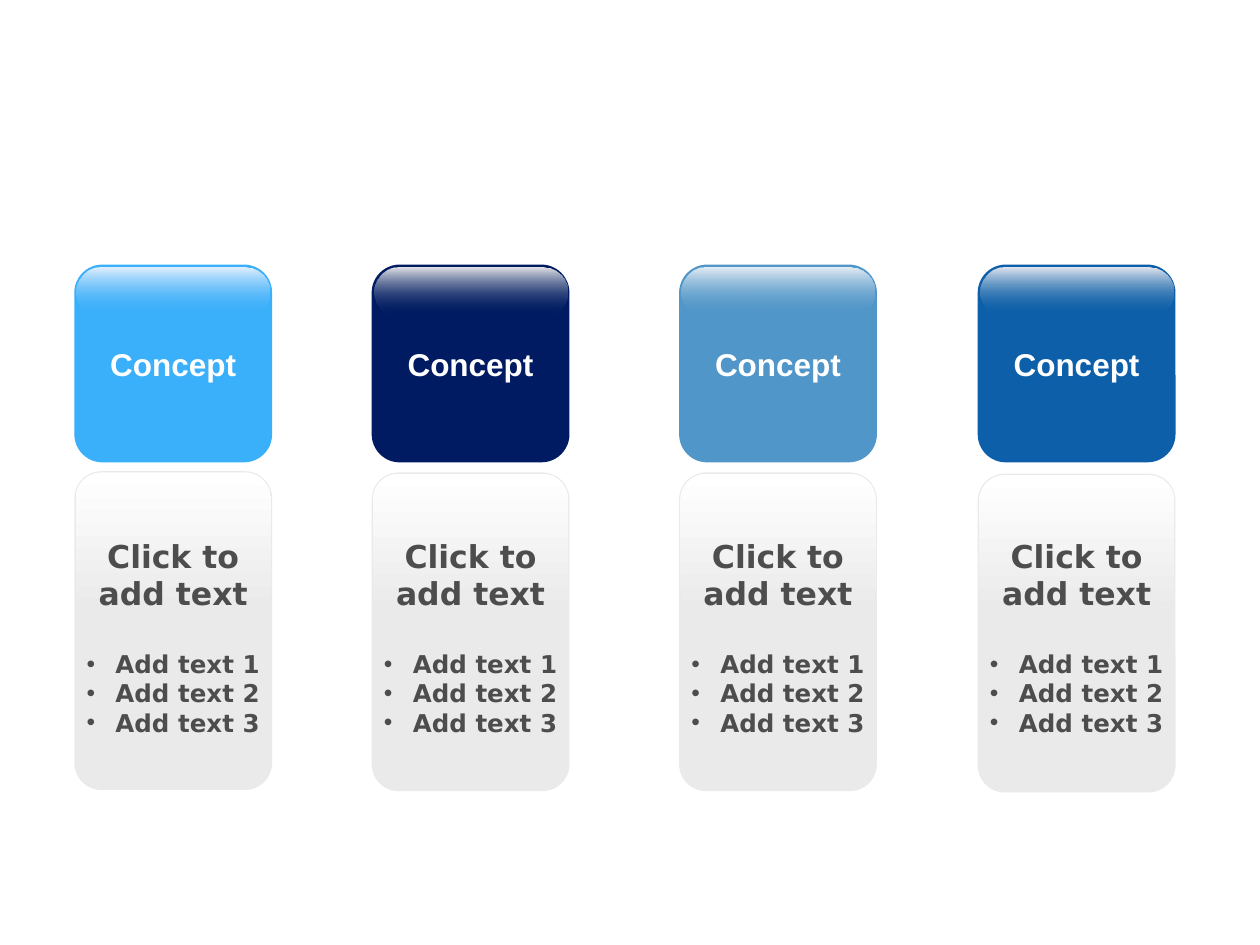
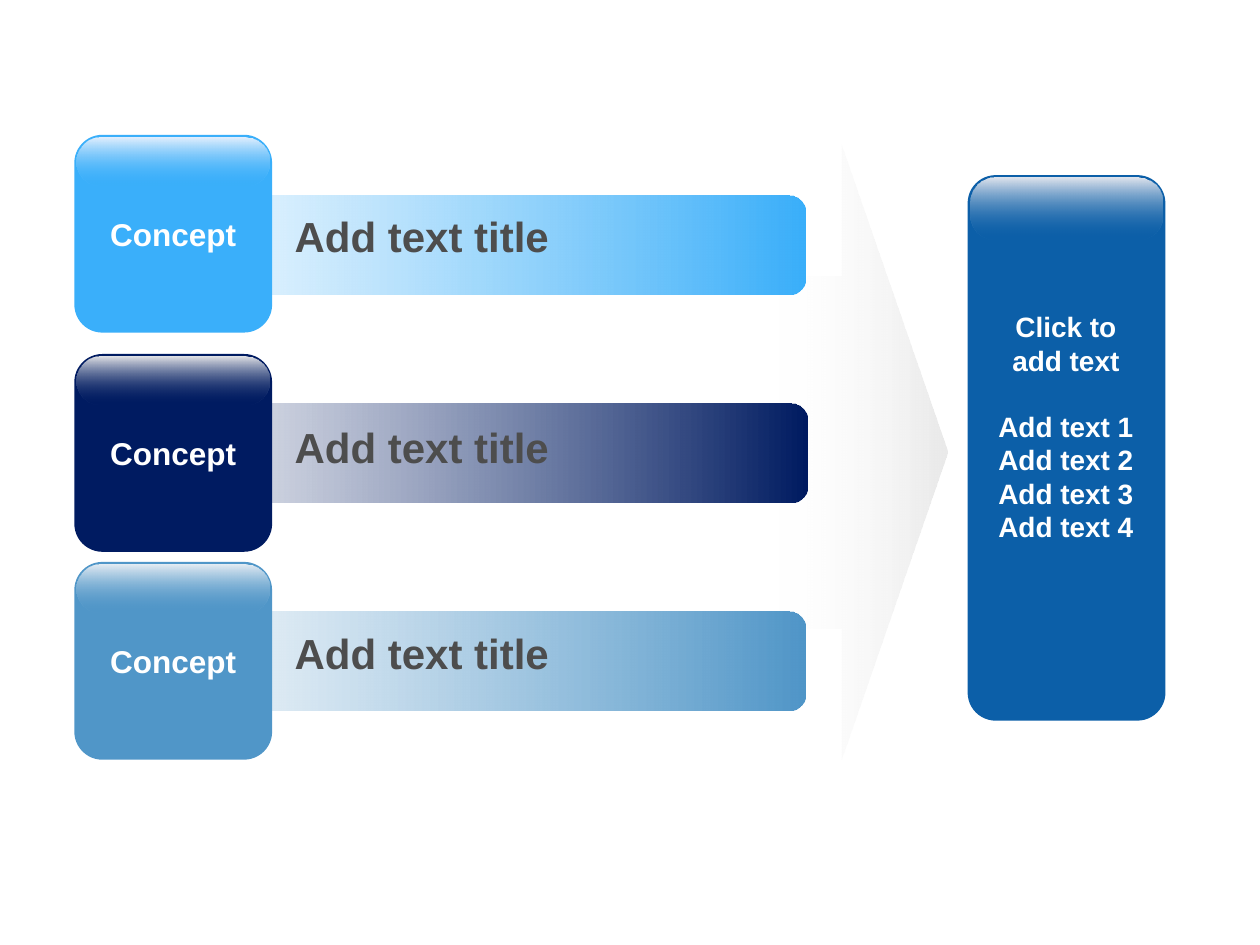
from lxml.etree import SubElement
from pptx import Presentation
from pptx.dml.color import RGBColor
from pptx.enum.shapes import MSO_SHAPE
from pptx.enum.text import MSO_ANCHOR, PP_ALIGN
from pptx.oxml.ns import qn
from pptx.util import Inches, Pt

COLORS = {
    "sky": "3AAFFA",
    "navy": "001B61",
    "steel": "5096C8",
    "blue": "0C5FA8",
    "panel": "EAEAEA",
    "mist": "FCFCFC",
    "white": "FFFFFF",
    "text": "4D4D4D",
}
GLOSS = {"sky": "E5F0FE", "navy": "E4E5E8", "steel": "E6EDF4", "blue": "E4E7EF"}
TILE = 1.57
LEFT = 0.59
INSET = 0.02
DOWN, RIGHT = 270, 0


def add_block(shapes, kind, at, adjustments):
    block = shapes.add_shape(kind, *[Inches(length) for length in at])
    block.shadow.inherit = False
    block.line.fill.background()
    for index, value in enumerate(adjustments):
        block.adjustments[index] = value
    return block


def fill_solid(block, color):
    block.fill.solid()
    block.fill.fore_color.rgb = RGBColor.from_string(COLORS[color])


def fill_gradient(block, stops, angle):
    block.fill.gradient()
    block.fill.gradient_angle = angle
    elements = block._element.spPr.findall(".//" + qn("a:gs"))
    for stop, element, (color, opacity) in zip(block.fill.gradient_stops, elements, stops):
        stop.color.rgb = RGBColor.from_string(color)
        if opacity < 100:
            alpha = SubElement(element.find(qn("a:srgbClr")), qn("a:alpha"))
            alpha.set("val", str(opacity * 1000))


def format_paragraph(para, size, color, font="Arial", align=PP_ALIGN.CENTER):
    para.alignment = align
    for span in para.runs:
        span.font.name = font
        span.font.size = Pt(size)
        span.font.bold = True
        span.font.color.rgb = RGBColor.from_string(COLORS[color])


def add_text(shapes, at, lines):
    box = shapes.add_textbox(*[Inches(length) for length in at])
    box.text_frame.word_wrap = True
    box.text_frame.text = "\n".join(lines)
    return box.text_frame.paragraphs


def add_bullet(para, indent):
    properties = para._p.get_or_add_pPr()
    properties.set("marL", str(Inches(indent)))
    properties.set("indent", str(-Inches(indent)))
    SubElement(properties, qn("a:buFont")).set("typeface", "Arial")
    SubElement(properties, qn("a:buChar")).set("char", "•")


def add_glossy_block(page, left, top, height, color, gloss_height, gloss_round):
    shapes = page.shapes.add_group_shape().shapes
    block = add_block(shapes, MSO_SHAPE.ROUNDED_RECTANGLE, (left, top, TILE, height), [0.142])
    fill_solid(block, color)
    gloss_at = (left + INSET, top + INSET, TILE - 2 * INSET, gloss_height)
    gloss = add_block(shapes, MSO_SHAPE.ROUNDED_RECTANGLE, gloss_at, [gloss_round])
    fill_gradient(gloss, [(GLOSS[color], 100), (COLORS[color], 0)], DOWN)
    return shapes, block


def add_concept(page, left, top, color):
    _, tile = add_glossy_block(page, left, top, TILE, color, 0.38, 0.5)
    frame = tile.text_frame
    frame.text = "Concept"
    frame.word_wrap = False
    frame.vertical_anchor = MSO_ANCHOR.MIDDLE
    format_paragraph(frame.paragraphs[0], 18, "white")


def add_panel(page, left, top):
    shapes = page.shapes.add_group_shape().shapes
    panel = add_block(shapes, MSO_SHAPE.ROUNDED_RECTANGLE, (left, top, TILE, 2.53), [0.137])
    fill_solid(panel, "panel")
    sheen_at = (left + 0.01, top + 0.01, TILE - 0.02, 1.1)
    sheen = add_block(shapes, MSO_SHAPE.ROUNDED_RECTANGLE, sheen_at, [0.186])
    fill_gradient(sheen, [(COLORS["white"], 100), (COLORS["panel"], 100)], DOWN)


def add_panel_text(page, left):
    lines = ["Click to add text"] + [f"Add text {number}" for number in range(1, 4)]
    heading, *items = add_text(page.shapes, (left - 0.08, 4.21, 1.73, 1.7), lines)
    format_paragraph(heading, 18, "text", "DejaVu Sans")
    items[0].space_before = Pt(21)
    for item in items:
        add_bullet(item, 0.23)
        format_paragraph(item, 14, "text", "DejaVu Sans")


def add_bar(page, left, top, width, color):
    bar = add_block(page.shapes, MSO_SHAPE.ROUNDED_RECTANGLE, (left, top, width, 0.79), [0.167])
    fill_gradient(bar, [(COLORS["white"], 75), (COLORS[color], 100)], RIGHT)


def add_bar_title(page, top):
    title = add_text(page.shapes, (2.24, top, 3.23, 0.6), ["Add text title"])[0]
    format_paragraph(title, 24, "text", align=PP_ALIGN.LEFT)


def add_arrow(page):
    arrow = add_block(page.shapes, MSO_SHAPE.UP_ARROW, (4.41, 2.92, 4.88, 1.34), [0.573, 0.628])
    arrow.rotation = 90
    fill_gradient(arrow, [(COLORS["panel"], 100), (COLORS["mist"], 0)], DOWN)


def add_result(page):
    shapes, _ = add_glossy_block(page, 7.68, 1.39, 4.33, "blue", 0.49, 0.401)
    lines = ["Click to add text"] + [f"Add text {number}" for number in range(1, 5)]
    paragraphs = add_text(shapes, (7.76, 2.41, 1.4, 2.37), lines)
    for para in paragraphs:
        format_paragraph(para, 16, "white")
    paragraphs[1].space_before = Pt(18.4)


def build_columns(page):
    columns = [
        (LEFT, 3.74, "sky"),
        (2.95, 3.75, "navy"),
        (5.39, 3.75, "steel"),
        (7.76, 3.76, "blue"),
    ]
    for left, panel_top, color in columns:
        add_panel(page, left, panel_top)
        add_panel_text(page, left)
        add_concept(page, left, 2.1, color)


def build_flow(page):
    rows = [
        (1.07, 0.81, 1.55, 5.58, 1.62, "sky"),
        (2.81, 0.75, 3.2, 5.66, 3.3, "navy"),
        (4.46, 0.81, 4.85, 5.58, 4.93, "steel"),
    ]
    add_arrow(page)
    for tile_top, bar_left, bar_top, bar_width, title_top, color in rows:
        add_bar(page, bar_left, bar_top, bar_width, color)
        add_bar_title(page, title_top)
        add_concept(page, LEFT, tile_top, color)
    add_result(page)


def main():
    deck = Presentation()
    deck.slide_width = Inches(10)
    deck.slide_height = Inches(7.5)
    blank = deck.slide_layouts[6]
    for build in (build_columns, build_flow):
        build(deck.slides.add_slide(blank))
    deck.save("out.pptx")


if __name__ == "__main__":
    main()
